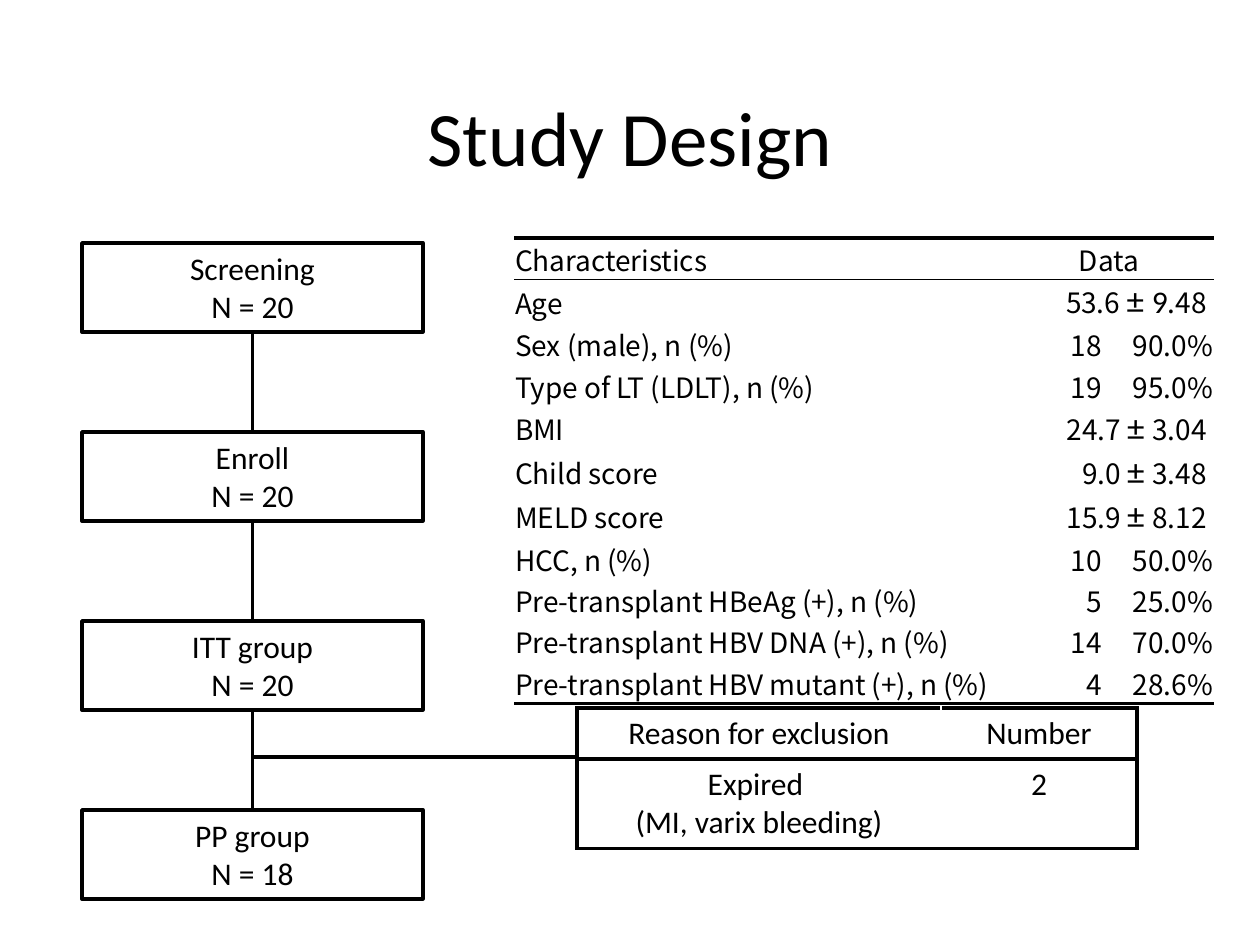
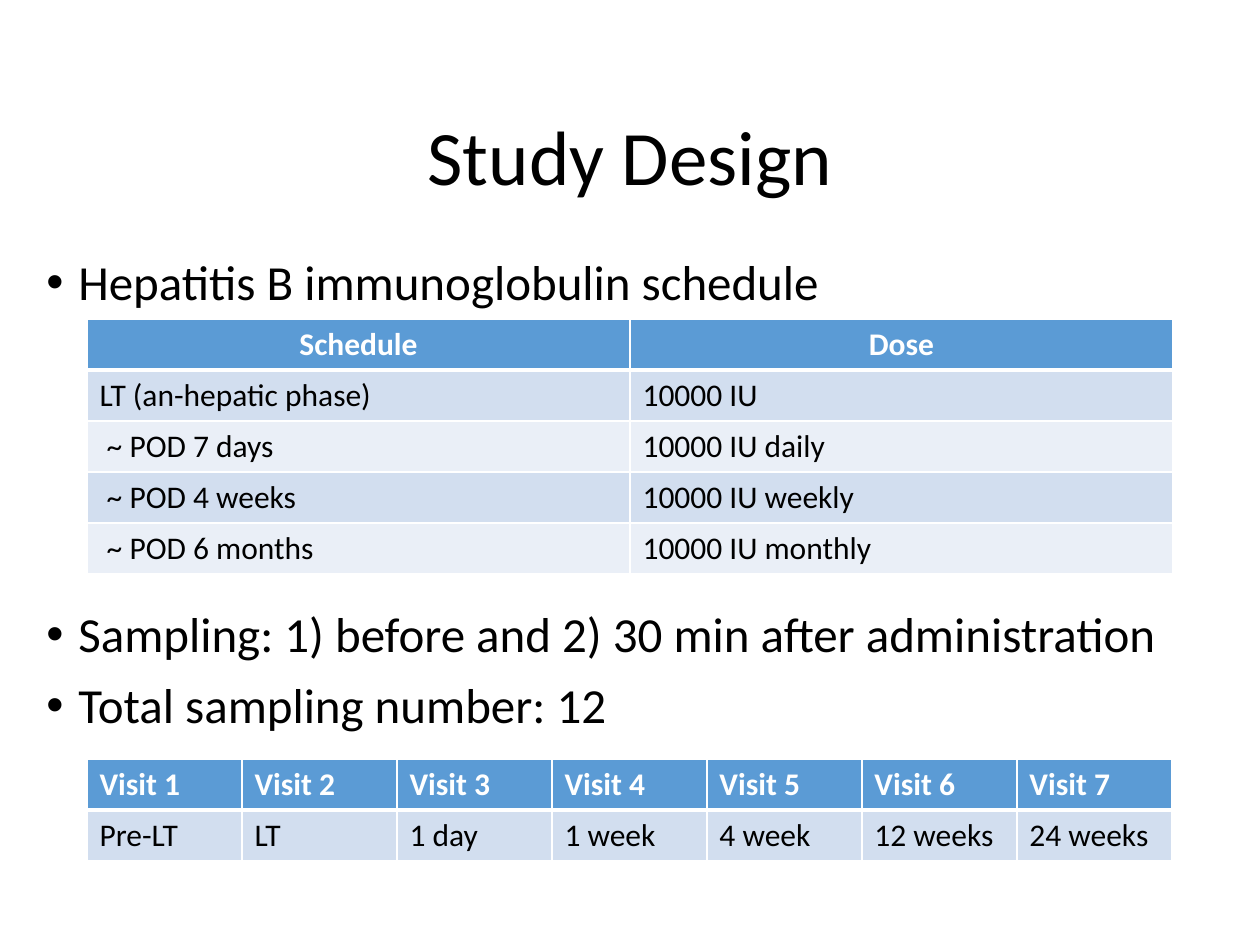
from dataclasses import dataclass

from lxml import etree
from pptx import Presentation
from pptx.dml.color import RGBColor
from pptx.enum.shapes import MSO_CONNECTOR, MSO_SHAPE
from pptx.enum.text import MSO_ANCHOR, MSO_AUTO_SIZE, PP_ALIGN
from pptx.oxml.ns import qn
from pptx.util import Emu, Pt

LEFT, CENTER, RIGHT = PP_ALIGN.LEFT, PP_ALIGN.CENTER, PP_ALIGN.RIGHT
TOP, MIDDLE = MSO_ANCHOR.TOP, MSO_ANCHOR.MIDDLE
NO_FIT = MSO_AUTO_SIZE.NONE
RECT = MSO_SHAPE.RECTANGLE
STRAIGHT = MSO_CONNECTOR.STRAIGHT
SCALE = 914400 / 126


@dataclass(frozen=True)
class Theme:
    """Colours, fonts and type sizes shared by the slides."""
    black: str = "000000"
    white: str = "FFFFFF"
    head: str = "5B9BD5"
    dark: str = "D2DEEF"
    light: str = "EAEFF7"
    font: str = "Calibri"
    data_font: str = "Noto Sans CJK KR"
    title: int = 44
    bullet: int = 28
    sign: int = 20
    body: int = 18
    data: int = 16


THEME = Theme()
THICK = (THEME.black, 2.25)
THIN = (THEME.black, 0.5)
GAP = (THEME.white, 1)
RULE = (THEME.white, 3)
SIGN = dict(size=THEME.sign, font=THEME.font)
STAGES = [("Screening", 20), ("Enroll", 20), ("ITT group", 20), ("PP group", 18)]
TRAITS = [
    ("Age", ["53.6 ", ("± ", SIGN), ("9", dict(size=THEME.body, font=THEME.font)), ".48 "]),
    ("Sex (male), n (%)", "18 ", "90.0%"),
    ("Type of LT (LDLT), n (%)", "19 ", "95.0%"),
    ("BMI", ["24.7 ", ("± ", SIGN), "3.04 "]),
    ("Child score", ["9.0 ", ("± ", SIGN), "3.48 "]),
    ("MELD score", ["15.9 ", ("± ", SIGN), "8.12 "]),
    ("HCC, n (%)", "10 ", "50.0%"),
    ("Pre-transplant HBeAg (+), n (%)", "5 ", "25.0%"),
    ("Pre-transplant HBV DNA (+), n (%)", "14 ", "70.0%"),
    ("Pre-transplant HBV mutant (+), n (%)", "4 ", "28.6%"),
]
REASONS = [
    (["Reason for exclusion"], ["Number"]),
    (["Expired ", "(MI, varix bleeding)"], ["2"]),
]
DOSES = [
    ("Schedule", "Dose"),
    ("LT (an-hepatic phase)", "10000 IU"),
    (" ~ POD 7 days", "10000 IU daily"),
    (" ~ POD 4 weeks", "10000 IU weekly"),
    (" ~ POD 6 months", "10000 IU monthly"),
]
VISITS = [
    [f"Visit {num}" for num in range(1, 8)],
    ["Pre-LT", "LT", "1 day", "1 week", "4 week", "12 weeks", "24 weeks"],
]


def px(num):
    """Turn px into EMU."""
    return Emu(round(num * SCALE))


def place(shape, x, y, w, h):
    """Set the place and size of a shape."""
    shape.left, shape.top, shape.width, shape.height = map(px, (x, y, w, h))


def style(run, size, font, color, bold):
    """Format one run."""
    run.font.size, run.font.name, run.font.bold = Pt(size), font, bold
    run.font.color.rgb = RGBColor.from_string(color)


def write(frame, lines, size=THEME.body, font=THEME.font, color=THEME.black,
          bold=False, align=LEFT, space=None, before=None):
    """Fill a text frame with lines, each a string or a list of runs."""
    base = dict(size=size, font=font, color=color, bold=bold)
    for num, line in enumerate(lines):
        para = frame.add_paragraph() if num else frame.paragraphs[0]
        para.alignment = align
        if space:
            para.line_spacing = space
        if before:
            para.space_before = Pt(before[num])
        for part in [line] if isinstance(line, str) else line:
            text, extra = (part, {}) if isinstance(part, str) else part
            run = para.add_run()
            run.text = text
            style(run, **{**base, **extra})


def start(deck, y):
    """Add a slide with its title at the given height."""
    slide = deck.slides.add_slide(deck.slide_layouts[5])
    title = slide.shapes.title
    place(title, 87, y, 1086, 183)
    frame = title.text_frame
    frame.auto_size, frame.vertical_anchor = NO_FIT, MIDDLE
    write(frame, ["Study Design"], size=THEME.title, align=CENTER, space=0.9)
    return slide


def ink(shape):
    """Give a box or line its black stroke."""
    shape.line.width = Pt(2)
    shape.line.color.rgb = RGBColor.from_string(THEME.black)


def box(slide, lines, x, y, w, h):
    """Add an outlined box with centred text."""
    shape = slide.shapes.add_shape(RECT, px(x), px(y), px(w), px(h))
    shape.shadow.inherit = False
    shape.fill.background()
    ink(shape)
    shape.text_frame.word_wrap = True
    shape.text_frame.vertical_anchor = TOP
    write(shape.text_frame, lines, align=CENTER)
    return shape


def link(slide, x1, y1, x2, y2):
    """Add a plain black line."""
    line = slide.shapes.add_connector(STRAIGHT, px(x1), px(y1), px(x2), px(y2))
    ink(line)
    etree.SubElement(line._element.spPr, qn("a:effectLst"))
    return line


def grid(slide, x, y, cols, rows):
    """Add a table with given column widths and row heights."""
    frame = slide.shapes.add_table(len(rows), len(cols), px(x), px(y),
                                   px(sum(cols)), px(sum(rows)))
    table = frame.table
    table.horz_banding = False
    for col, width in zip(table.columns, cols):
        col.width = px(width)
    for row, height in zip(table.rows, rows):
        row.height = px(height)
    return table


def paint(cell, fill=None, **edges):
    """Set the borders L, R, T, B and the fill of a cell."""
    props = cell._tc.get_or_add_tcPr()
    for side in "LRTB":
        color, width = edges.get(side) or (None, 0)
        line = etree.SubElement(props, qn(f"a:ln{side}"), w=str(Pt(width)))
        if color:
            solid = etree.SubElement(line, qn("a:solidFill"))
            etree.SubElement(solid, qn("a:srgbClr"), val=color)
        else:
            etree.SubElement(line, qn("a:noFill"))
    if fill:
        cell.fill.solid()
        cell.fill.fore_color.rgb = RGBColor.from_string(fill)
    else:
        cell.fill.background()


def flow(slide):
    """Draw the column of study stages and the lines between them."""
    boxes = [box(slide, [name, f"N = {count}"], 82, 243 + 189 * num, 341, 89)
             for num, (name, count) in enumerate(STAGES)]
    for upper, lower in zip(boxes, boxes[1:]):
        line = link(slide, 0, 0, 0, 0)
        line.begin_connect(upper, 2)
        line.end_connect(lower, 0)
    link(slide, 254, 757, 577, 757)


def reasons(slide):
    """Add the table of exclusions."""
    table = grid(slide, 577, 708, [364, 196], [51, 89])
    for r, row in enumerate(REASONS):
        for c, lines in enumerate(row):
            cell = table.cell(r, c)
            paint(cell, T=THICK, B=THICK, L=GAP if c else THICK,
                  R=THICK if c else GAP)
            write(cell.text_frame, lines, align=CENTER)


def traits(slide):
    """Add the table of patient characteristics."""
    rows = [("Characteristics", "Data")] + TRAITS
    tall = [43 if isinstance(row[1], list) else 36 for row in rows]
    table = grid(slide, 514, 238, [490, 105, 105], tall)
    last = len(rows) - 1
    for r, row in enumerate(rows):
        top = {0: THICK, 1: THIN}.get(r)
        base = {0: THIN, last: THICK}.get(r)
        for c in range(3):
            cell = table.cell(r, c)
            paint(cell, T=top, B=base)
            cell.vertical_anchor = MIDDLE
            cell.margin_left = cell.margin_right = cell.margin_top = px(1)
            cell.margin_bottom = 0
        if len(row) == 2:
            table.cell(r, 1).merge(table.cell(r, 2))
        for c, text in enumerate(row):
            align = LEFT if c == 0 else RIGHT if r else CENTER
            write(table.cell(r, c).text_frame, [text], size=THEME.data,
                  font=THEME.data_font, align=align)


def banded(slide, x, y, width, rows, align):
    """Add a table with a blue header and shaded rows."""
    table = grid(slide, x, y, [width] * len(rows[0]), [51] * len(rows))
    for r, row in enumerate(rows):
        fill = (THEME.dark if r % 2 else THEME.light) if r else THEME.head
        color = THEME.black if r else THEME.white
        for c, text in enumerate(row):
            cell = table.cell(r, c)
            paint(cell, fill, L=GAP, R=GAP, T=GAP if r != 1 else RULE,
                  B=GAP if r else RULE)
            write(cell.text_frame, [text], color=color, bold=not r,
                  align=LEFT if r else align)


def points(slide, lines, before):
    """Add the bulleted text."""
    frame = slide.shapes.add_textbox(px(34), px(252), px(1188), px(651)).text_frame
    frame.word_wrap = True
    write(frame, lines, size=THEME.bullet, space=0.9, before=before)
    for para in frame.paragraphs:
        props = para._p.get_or_add_pPr()
        props.set("marL", str(px(32)))
        props.set("indent", str(-px(32)))
        etree.SubElement(props, qn("a:buFont"), typeface="Arial")
        etree.SubElement(props, qn("a:buChar"), char="•")


def main():
    """Build and save both slides."""
    deck = Presentation()
    deck.slide_width, deck.slide_height = px(1260), px(945)
    slide = start(deck, 50)
    flow(slide)
    reasons(slide)
    traits(slide)
    slide = start(deck, 69)
    points(slide, ["Hepatitis B immunoglobulin schedule",
                   "Sampling: 1) before and 2) 30 min after administration",
                   "Total sampling number: 12"], [10, 171, 10])
    banded(slide, 87, 319, 543, DOSES, CENTER)
    banded(slide, 87, 759, 155, VISITS, LEFT)
    deck.save("out.pptx")


if __name__ == "__main__":
    main()
